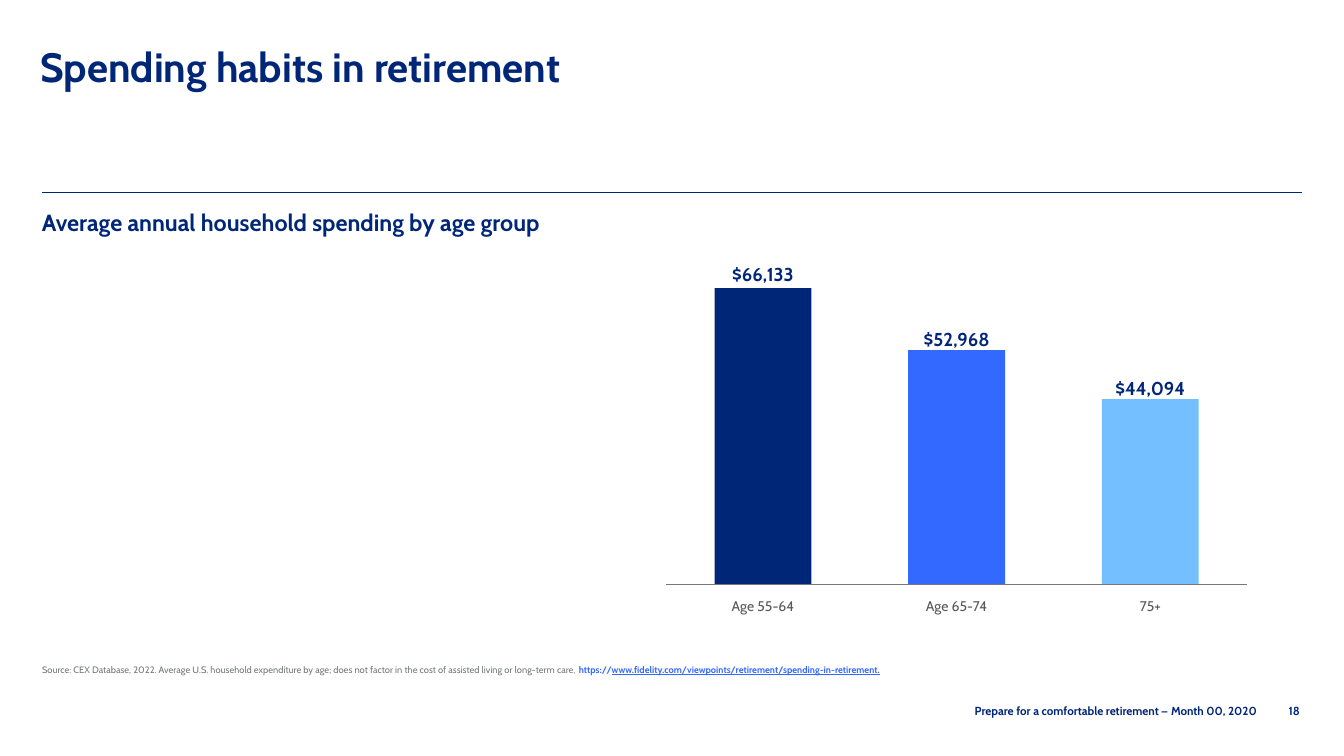
from dataclasses import dataclass

from lxml.etree import SubElement
from pptx import Presentation
from pptx.dml.color import RGBColor
from pptx.enum.shapes import MSO_CONNECTOR as Connector
from pptx.enum.shapes import MSO_SHAPE as Shape
from pptx.enum.text import MSO_ANCHOR as Anchor
from pptx.enum.text import MSO_AUTO_SIZE as AutoSize
from pptx.enum.text import PP_ALIGN as Align
from pptx.oxml.ns import qn
from pptx.util import Pt

NAVY = RGBColor(0x00, 0x26, 0x77)
BLUE = RGBColor(0x33, 0x69, 0xFF)
SKY = RGBColor(0x73, 0xBF, 0xFF)
GRAY = RGBColor(0x75, 0x78, 0x7B)
DARK_GRAY = RGBColor(0x59, 0x59, 0x59)
FONT = "Cabin"
MARGIN = 36

# Bar area: each bar fills the middle half of its column
AXIS_LEFT, AXIS_TOP, AXIS_WIDTH = 571, 501, 498


@dataclass
class AgeGroup:
    name: str
    spending: int
    bar_height: float
    value_top: float
    color: RGBColor


@dataclass
class TextBox:
    text: str
    left: float
    top: float
    width: float
    height: float
    size: float


AGE_GROUPS = [
    AgeGroup("Age 55-64", 66133, 254, 225.7, NAVY),
    AgeGroup("Age 65-74", 52968, 200.8, 281.4, BLUE),
    AgeGroup("75+", 44094, 159, 323.4, SKY),
]
HEADING = TextBox("Average annual household spending by age group",
                  MARGIN, 178.5, 640, 25, 20)
FOOTER = TextBox("Prepare for a comfortable retirement ", 835.5, 603, 252, 13, 10)
PAGE_NUMBER = TextBox("18", 1104.5, 603, 15, 13, 10)
SOURCE = TextBox("Source: CEX Database, 2022. Average U.S. household expenditure by age; "
                 "does not factor in the cost of assisted living or long-term care, ",
                 MARGIN, 569.5, 763, 10, 8)


def add_text(p, text: str, size: float, color: RGBColor, bold: bool = True,
             name: str = FONT, underline: bool = False) -> None:
    r = p.add_run()
    r.text = text
    r.font.name, r.font.size, r.font.bold = name, Pt(size), bold
    r.font.color.rgb = color
    if underline:
        r.font.underline = True


def clear_frame(tf) -> None:
    tf.margin_left = tf.margin_right = tf.margin_top = tf.margin_bottom = 0
    tf.word_wrap = True
    tf.auto_size = AutoSize.NONE
    tf.vertical_anchor = Anchor.TOP


def add_box(s, box: TextBox, color: RGBColor = NAVY, bold: bool = True,
            align: Align = Align.LEFT):
    sp = s.shapes.add_textbox(Pt(box.left), Pt(box.top), Pt(box.width), Pt(box.height))
    clear_frame(sp.text_frame)
    p = sp.text_frame.paragraphs[0]
    p.alignment = align
    add_text(p, box.text, size=box.size, color=color, bold=bold)
    return p


def add_title(s, text: str) -> None:
    sp = s.shapes.title
    sp.left, sp.top, sp.width, sp.height = Pt(34.6), Pt(36), Pt(1082), Pt(42)
    clear_frame(sp.text_frame)
    p = sp.text_frame.paragraphs[0]
    p.alignment = Align.LEFT
    add_text(p, text, size=35, color=NAVY)


def add_rule(s, left: float, top: float, width: float, color: RGBColor) -> None:
    rule = s.shapes.add_connector(Connector.STRAIGHT, Pt(left), Pt(top),
                                  Pt(left + width), Pt(top))
    rule.line.color.rgb = color
    rule.line.width = Pt(0.5)
    SubElement(rule._element.spPr, qn("a:effectLst"))


def add_bar(s, group: AgeGroup, left: float, width: float) -> None:
    sp = s.shapes.add_shape(Shape.RECTANGLE, Pt(left), Pt(AXIS_TOP - group.bar_height),
                            Pt(width), Pt(group.bar_height))
    sp.shadow.inherit = False
    sp.fill.solid()
    sp.fill.fore_color.rgb = group.color
    sp.line.fill.background()


def add_spending_bars(s, groups: list[AgeGroup]) -> None:
    column = AXIS_WIDTH / len(groups)
    bar_width = column / 2
    for i, group in enumerate(groups):
        left = AXIS_LEFT + i * column + bar_width / 2
        add_bar(s, group, left, bar_width)
        value = TextBox(f"${group.spending:,}", left, group.value_top, bar_width, 20, 16)
        age = TextBox(group.name, left, 512, bar_width, 14, 12)
        add_box(s, value, align=Align.CENTER)
        add_box(s, age, color=DARK_GRAY, bold=False, align=Align.CENTER)
    add_rule(s, AXIS_LEFT, AXIS_TOP, AXIS_WIDTH, GRAY)


def main() -> None:
    prs = Presentation()
    prs.slide_width, prs.slide_height = Pt(1152), Pt(648)
    s = prs.slides.add_slide(prs.slide_layouts[5])

    # Title and heading
    add_title(s, "Spending habits in retirement")
    add_rule(s, MARGIN, 164.9, 1080, NAVY)
    add_box(s, HEADING)

    add_spending_bars(s, AGE_GROUPS)

    # Source note
    p = add_box(s, SOURCE, color=GRAY, bold=False)
    add_text(p, "https://", SOURCE.size, BLUE)
    add_text(p, "www.fidelity.com/viewpoints/retirement/spending-in-retirement.",
             SOURCE.size, BLUE, underline=True)

    # Footer
    p = add_box(s, FOOTER)
    add_text(p, "– ", FOOTER.size, NAVY, name="Arial")
    add_text(p, "Month 00, 2020", FOOTER.size, NAVY)
    add_box(s, PAGE_NUMBER)

    prs.save("out.pptx")


if __name__ == "__main__":
    main()
